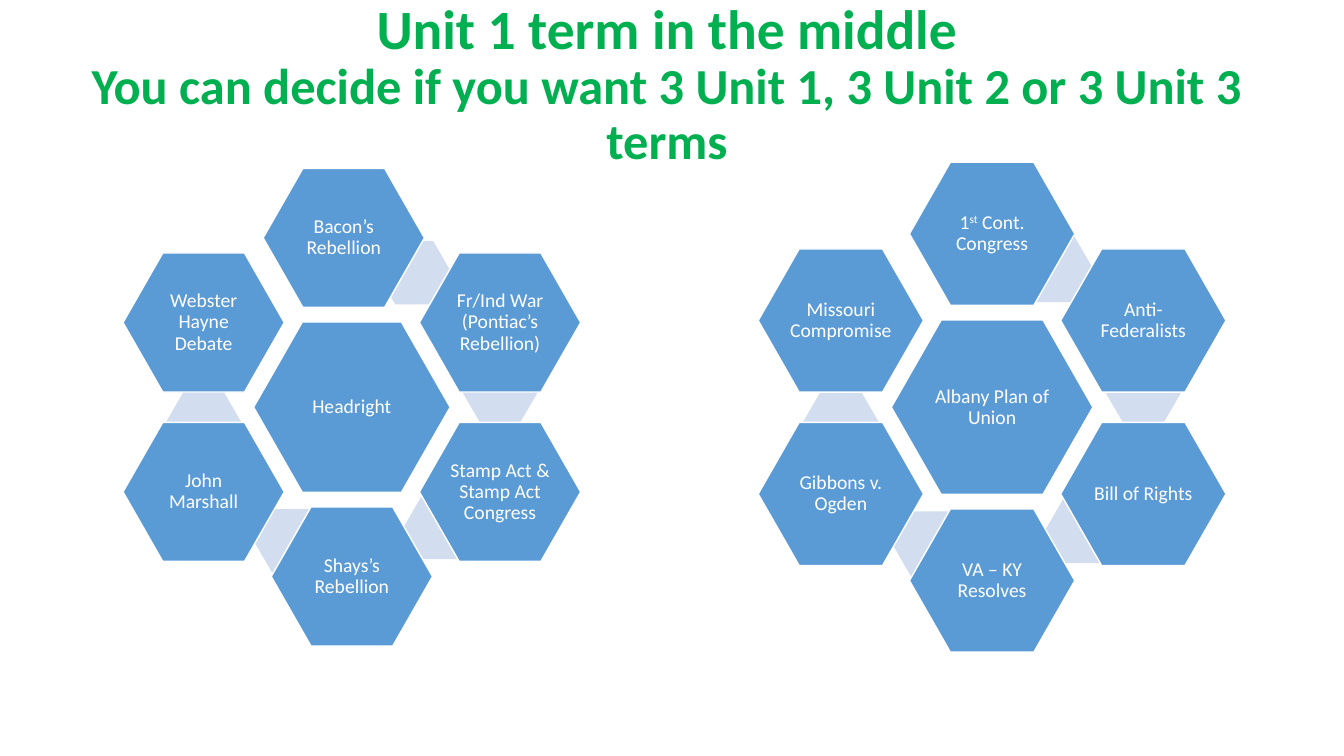
from dataclasses import dataclass

from pptx import Presentation
from pptx.dml.color import RGBColor
from pptx.enum.shapes import MSO_SHAPE
from pptx.enum.text import MSO_ANCHOR, PP_ALIGN
from pptx.util import Inches, Pt

HEXAGON = MSO_SHAPE.HEXAGON
MIDDLE = MSO_ANCHOR.MIDDLE
CENTER = PP_ALIGN.CENTER


@dataclass(frozen=True)
class Theme:
    font: str = "Calibri"
    title: RGBColor = RGBColor(0x00, 0xB0, 0x50)
    hexagon: RGBColor = RGBColor(0x5B, 0x9B, 0xD5)
    link: RGBColor = RGBColor(0xD2, 0xDE, 0xEF)
    white: RGBColor = RGBColor(0xFF, 0xFF, 0xFF)
    heading_size: float = 39.6
    subheading_size: float = 36
    label_size: float = 14


@dataclass(frozen=True)
class Cluster:
    """Sizes in inches; step is the horizontal and vertical unit of the ring."""
    center: tuple
    core_size: tuple
    petal_size: tuple
    link_size: tuple
    step: tuple
    core: str
    petals: tuple
    top_nudge: float = 0

    def place(self, column, row):
        return (self.center[0] + column * self.step[0],
                self.center[1] + row * self.step[1])


# Clockwise from the top, in steps from the middle of the cluster
PETAL_SPOTS = [(0, -2), (1, -1), (1, 1), (0, 2), (-1, 1), (-1, -1)]
LINK_SPOTS = [(0.42, -1.59), (1, -0.17), (0.6, 1.42), (-0.41, 1.58), (-1, 0.17)]

CLUSTERS = [
    Cluster((3.49, 4.04), (1.95, 1.69), (1.6, 1.38), (0.74, 0.63), (1.47, 0.84),
            "Headright",
            ("Bacon’s Rebellion", "Fr/Ind War (Pontiac’s Rebellion)",
             "Stamp Act & Stamp Act Congress", "Shays’s Rebellion",
             "John Marshall", "Webster Hayne Debate"),
            top_nudge=-0.08),
    Cluster((9.84, 4.04), (2, 1.73), (1.64, 1.42), (0.75, 0.65), (1.5, 0.86),
            "Albany Plan of Union",
            ("1^st^ Cont. Congress", "Anti-Federalists", "Bill of Rights",
             "VA – KY Resolves", "Gibbons v. Ogden", "Missouri Compromise")),
]


def apply(target, values):
    for name, value in values.items():
        setattr(target, name, value)


def bounds(center, size):
    """Left, top, width and height of a box around its center."""
    return [Inches(value) for value in (center[0] - size[0] / 2,
                                        center[1] - size[1] / 2, *size)]


class SlideBuilder:
    def __init__(self, page, theme):
        self.page = page
        self.theme = theme

    def span(self, para, text, **font_values):
        span = para.add_run()
        span.text = text
        color = font_values.pop("color")
        apply(span.font, {"name": self.theme.font, **font_values})
        span.font.color.rgb = color
        return span

    def text_box(self, shapes, box_bounds, frame_values, para_values):
        """Add a centred, wrapping text box and return its first paragraph."""
        frame = shapes.add_textbox(*box_bounds).text_frame
        apply(frame, {"word_wrap": True, "vertical_anchor": MIDDLE, **frame_values})
        para = frame.paragraphs[0]
        apply(para, {"alignment": CENTER, "line_spacing": 0.9, **para_values})
        return para

    def title(self, heading, subheading):
        theme = self.theme
        box_bounds = [Inches(value) for value in (0.19, 0.4, 12.85, 1.45)]
        para = self.text_box(self.page.shapes, box_bounds,
                             {"margin_bottom": Inches(0.6)}, {})
        style = {"bold": True, "color": theme.title}
        self.span(para, heading, size=Pt(theme.heading_size), **style)
        para.add_line_break()
        self.span(para, subheading, size=Pt(theme.subheading_size), **style)

    def hexagon(self, shapes, center, size, fill, adjust, outlined=True):
        shape = shapes.add_shape(HEXAGON, *bounds(center, size))
        shape.adjustments[0] = adjust
        shape.shadow.inherit = False
        shape.fill.solid()
        shape.fill.fore_color.rgb = fill
        if outlined:
            shape.line.color.rgb = self.theme.white
            shape.line.width = Pt(1)
        else:
            shape.line.fill.background()

    def link(self, shapes, center, size):
        self.hexagon(shapes, center, size, self.theme.link, 0.289, outlined=False)

    def term(self, shapes, center, size, text):
        """A hexagon with its label; text between ^ marks is superscript."""
        theme = self.theme
        self.hexagon(shapes, center, size, theme.hexagon, 0.286)
        label_size = [length * 2 / 3 for length in size]
        sides = ("left", "top", "right", "bottom")
        margins = {f"margin_{side}": Inches(0.02) for side in sides}
        para = self.text_box(shapes, bounds(center, label_size), margins,
                             {"space_after": Pt(4.9)})
        for index, part in enumerate(text.split("^")):
            span = self.span(para, part, size=Pt(theme.label_size), color=theme.white)
            if index % 2:
                span.font._element.set("baseline", "30000")

    def cluster(self, cluster):
        shapes = self.page.shapes.add_group_shape().shapes
        self.term(shapes, cluster.center, cluster.core_size, cluster.core)
        for index, (spot, text) in enumerate(zip(PETAL_SPOTS, cluster.petals)):
            if index < len(LINK_SPOTS):
                self.link(shapes, cluster.place(*LINK_SPOTS[index]), cluster.link_size)
            x, y = cluster.place(*spot)
            if index == 0:
                x += cluster.top_nudge
            self.term(shapes, (x, y), cluster.petal_size, text)


def main():
    deck = Presentation()
    deck.slide_width = Inches(13.33)
    deck.slide_height = Inches(7.5)
    page = deck.slides.add_slide(deck.slide_layouts[6])
    builder = SlideBuilder(page, Theme())
    builder.title("Unit 1 term in the middle",
                  "You can decide if you want 3 Unit 1, 3 Unit 2 or 3 Unit 3 terms")
    for cluster in CLUSTERS:
        builder.cluster(cluster)
    deck.save("out.pptx")


if __name__ == "__main__":
    main()
